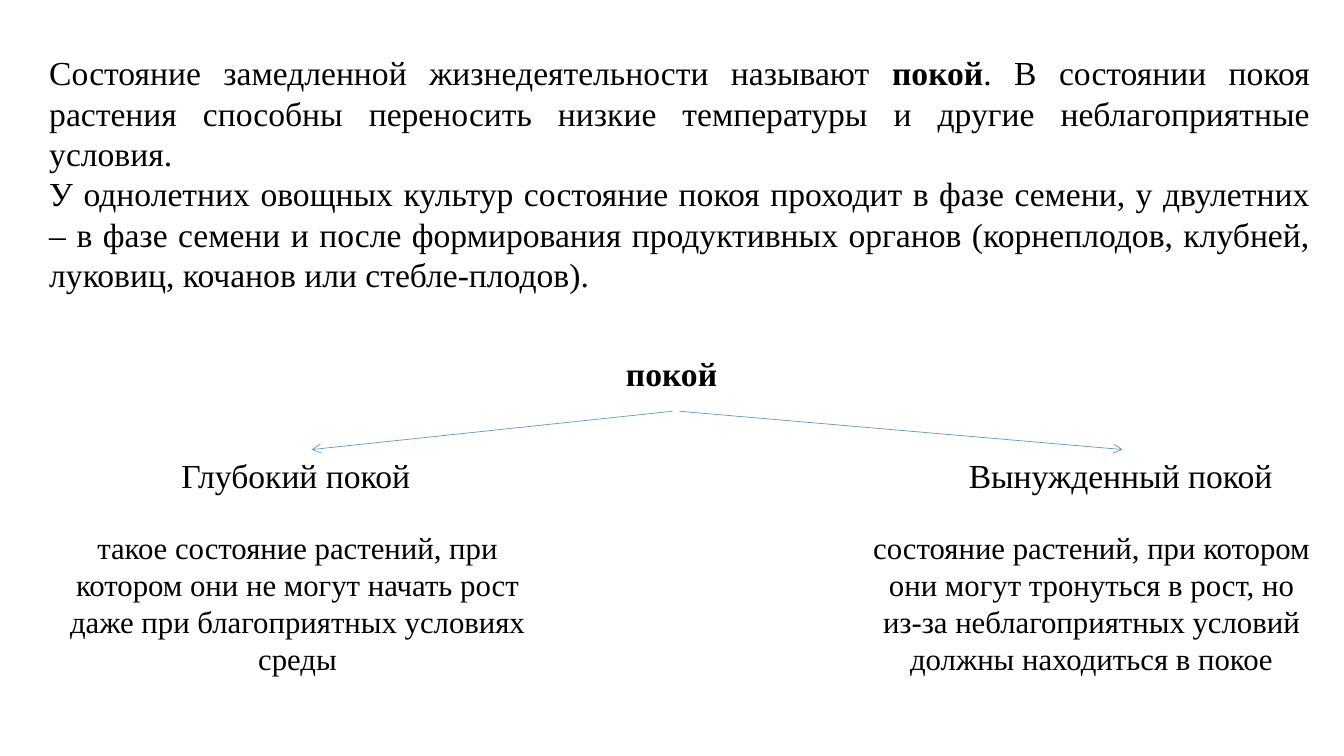
from pptx import Presentation
from pptx.dml.color import RGBColor
from pptx.enum import shapes, text
from pptx.oxml import parse_xml
from pptx.oxml import ns
from pptx import util as u

PX = 9144
FONT = "Times New Roman"
BLACK, BLUE = "000000", "5B9BD5"
LEFT, CENTER, JUSTIFY = text.PP_ALIGN.LEFT, text.PP_ALIGN.CENTER, text.PP_ALIGN.JUSTIFY


def px(length):
    """Turn px into EMU."""
    return u.Emu(length * PX)


def color(hex_string):
    """Turn a hex string into a colour."""
    return RGBColor.from_string(hex_string)


def add_text(slide, box, paragraphs, size=24, align=LEFT, wrap=True, bold=()):
    """Place paragraphs, each a list of runs, with the runs in bold set bold."""
    label = slide.shapes.add_textbox(*map(px, box))
    frame = label.text_frame
    frame.word_wrap = wrap
    frame.auto_size = text.MSO_AUTO_SIZE.SHAPE_TO_FIT_TEXT
    for index, pieces in enumerate(paragraphs):
        paragraph = frame.add_paragraph() if index else frame.paragraphs[0]
        paragraph.alignment = align
        for piece in pieces:
            run = paragraph.add_run()
            run.text = piece
            run.font.name = FONT
            run.font.size = u.Pt(size)
            run.font.bold = piece in bold
            run.font.color.rgb = color(BLACK)
    return label


def add_arrow(slide, start, end):
    """Draw a thin arrow from start to end."""
    arrow = slide.shapes.add_connector(
        shapes.MSO_CONNECTOR.STRAIGHT, *map(px, start + end))
    arrow.line.color.rgb = color(BLUE)
    arrow.line.width = u.Pt(0.5)
    arrow.line._get_or_add_ln().append(
        parse_xml(f'<a:tailEnd {ns.nsdecls("a")} type="arrow"/>'))
    arrow._element.spPr.append(parse_xml(f'<a:effectLst {ns.nsdecls("a")}/>'))
    return arrow


def add_definition(slide, box):
    """Place the justified introduction."""
    add_text(slide, box, [
        ["Состояние замедленной жизнедеятельности называют ", "покой",
         ". В состоянии покоя растения способны переносить низкие температуры "
         "и другие неблагоприятные условия."],
        ["У однолетних овощных культур состояние покоя проходит в фазе семени, "
         "у двулетних – в фазе семени и после формирования продуктивных органов "
         "(корнеплодов, клубней, луковиц, кочанов или стебле-плодов)."],
    ], align=JUSTIFY, bold=("покой",))


def add_kind(slide, box, name, name_left, name_width, meaning):
    """Place the name of a kind of dormancy above its meaning."""
    left, top, width, height = box
    heading = add_text(slide, (left + name_left, top, name_width, 50),
                       [[name]], wrap=False)
    add_text(slide, (left, top + 74, width, height - 74), [[meaning]],
             size=22, align=CENTER)
    return heading


def add_scheme(slide, box):
    """Place the term and the two kinds that branch from it."""
    left, top, width, height = box
    kinds_top, kinds_height = top + 101, height - 101
    add_text(slide, (left + 560, top, 112, 50), [["покой"]],
             wrap=False, bold=("покой",))
    add_kind(slide, (left, kinds_top, 488, kinds_height), "Глубокий покой", 119, 250,
             "такое состояние растений, при котором они не могут начать рост "
             "даже при благоприятных условиях среды")
    forced = add_kind(
        slide, (left + width - 455, kinds_top, 455, kinds_height),
        "Вынужденный покой", 96, 325,
        "состояние растений, при котором они могут тронуться в рост, "
        "но из-за неблагоприятных условий должны находиться в покое")
    add_arrow(slide, (left + 616, top + 63), (left + 258, kinds_top))
    to_forced = add_arrow(slide, (left + 623, top + 63), (left + 1063, kinds_top))
    to_forced.end_connect(forced, 0)


def main():
    """Build and save the slide."""
    deck = Presentation()
    deck.slide_width, deck.slide_height = px(1333), px(750)
    slide = deck.slides.add_slide(deck.slide_layouts[6])
    add_definition(slide, (39, 47, 1270, 252))
    add_scheme(slide, (51, 345, 1259, 333))
    deck.save("out.pptx")


if __name__ == "__main__":
    main()
